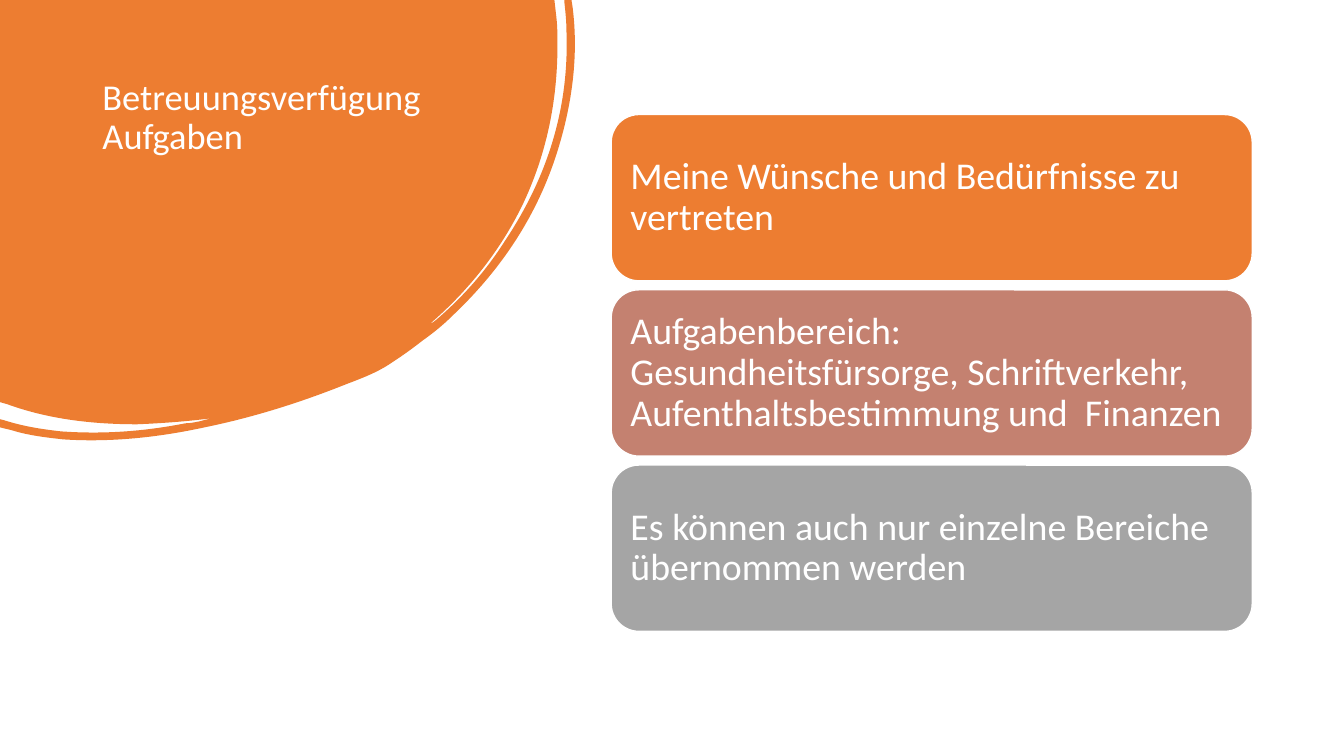
import lxml.etree
import pptx
import pptx.util
import pptx.dml.color
import pptx.enum.shapes
import pptx.enum.text
import pptx.oxml.ns

Pt = pptx.util.Pt
qn = pptx.oxml.ns.qn
COLORS = {"orange": "ED7D31", "rose": "C48170", "gray": "A5A5A5", "white": "FFFFFF"}
FONT = "Calibri"
UNITS = 100  # path units per point
BLOB_WIDTH, BLOB_HEIGHT = 411.1, 314.6

# Each entry is one point (straight line) or three points (Bezier curve), in points.
BLOB = [
    [(396, 0)],
    [(397.4, 12.2)],
    [(398.2, 18.7), (398.2, 25.9), (398.2, 32.4)],
    [(398.2, 72.7), (390.2, 110.9), (373, 146.9)],
    [(357.1, 179.3), (334.8, 207.4), (307.4, 231.1)],
    [(308.9, 231.1), (309.6, 229.7), (311, 229)],
    [(330.5, 212.4), (347, 193.7), (360.7, 172.1)],
    [(391, 126.7), (406.8, 77), (404.6, 21.6)],
    [(404.6, 15.1), (403.9, 8.6), (403.2, 2.2)],
    [(403.2, 0)],
    [(408.2, 0)],
    [(409, 5)],
    [(413.3, 38.9), (409, 73.4), (398.2, 108)],
    [(383.8, 154.1), (357.8, 193), (322.6, 226.1)],
    [(316.1, 232.6), (308.9, 238.3), (301.7, 243.4)],
    [(294.5, 249.1), (287.3, 254.2), (278.6, 259.9)],
    [(270, 265.7), (259.2, 270), (247.7, 274.3)],
    [(215.3, 287.3), (181.4, 298.1), (146.2, 305.3)],
    [(113, 312.5), (79.2, 316.1), (45.4, 313.9)],
    [(32.4, 312.5), (20.2, 311), (8.6, 307.4)],
    [(0, 305.3)],
    [(0, 299.5)],
    [(2.9, 300.2)],
    [(16.6, 304.6), (30.2, 306.7), (43.9, 308.2)],
    [(74.2, 310.3), (103, 308.2), (132.5, 302.4)],
    [(136.1, 302.4), (139, 301.7), (142.6, 301)],
    [(145.4, 300.2), (148.3, 299.5), (151.2, 298.8)],
    [(133.9, 301), (115.9, 302.4), (97.9, 303.1)],
    [(66.2, 303.1), (34.6, 299.5), (5, 288.7)],
    [(0, 287.3)],
]

CARDS = [
    ("Meine Wünsche und Bedürfnisse zu vertreten", "orange"),
    ("Aufgabenbereich: Gesundheitsfürsorge, Schriftverkehr, "
     "Aufenthaltsbestimmung und  Finanzen", "rose"),
    ("Es können auch nur einzelne Bereiche übernommen werden", "gray"),
]
CARD_LEFT, CARD_TOP, CARD_WIDTH, CARD_HEIGHT = 436.6, 81.8, 457.9, 118.8
CARD_STEP = 125.2


def rgb(name):
    return pptx.dml.color.RGBColor.from_string(COLORS[name])


def set_fill(sp, color):
    sp.shadow.inherit = False
    sp.fill.solid()
    sp.fill.fore_color.rgb = rgb(color)


def set_text(sp, text, size, anchor):
    tf = sp.text_frame
    tf.text = text
    tf.word_wrap = True
    tf.auto_size = pptx.enum.text.MSO_AUTO_SIZE.NONE
    tf.vertical_anchor = anchor
    p = tf.paragraphs[0]
    p.alignment = pptx.enum.text.PP_ALIGN.LEFT
    p.line_spacing = 0.9
    font = p.runs[0].font
    font.name = FONT
    font.size = Pt(size)
    font.color.rgb = rgb("white")


def bend_lines(sp, segments):
    """Turn the line of every three-point segment into a Bezier curve."""
    lines = list(sp._element.iter(qn("a:lnTo")))
    for line, segment in zip(lines, segments):
        if len(segment) == 3:
            curve = lxml.etree.Element(qn("a:cubicBezTo"))
            for x, y in segment:
                lxml.etree.SubElement(curve, qn("a:pt"), x=str(round(x * UNITS)),
                                      y=str(round(y * UNITS)))
            line.getparent().replace(line, curve)


def add_blob(s):
    ends = [(x * UNITS, y * UNITS) for x, y in (segment[-1] for segment in BLOB)]
    builder = s.shapes.build_freeform(0, 0, scale=Pt(1) / UNITS)
    builder.add_line_segments(ends, close=True)
    sp = builder.convert_to_shape()
    bend_lines(sp, BLOB)
    # The curves reach beyond their end points, so the frame is widened to hold them.
    sp.width, sp.height = Pt(BLOB_WIDTH), Pt(BLOB_HEIGHT)
    outline = next(sp._element.iter(qn("a:path")))
    outline.set("w", str(round(BLOB_WIDTH * UNITS)))
    outline.set("h", str(round(BLOB_HEIGHT * UNITS)))
    set_fill(sp, "orange")
    sp.line.fill.background()
    return sp


def add_title(s, blob):
    """Fill the title placeholder and keep it in front of the blob."""
    title = s.shapes.title
    title.left, title.top, title.width, title.height = Pt(66), Pt(53), Pt(253.4), Pt(160)
    set_text(title, "Betreuungsverfügung Aufgaben", 26, pptx.enum.text.MSO_ANCHOR.TOP)
    title._element.addprevious(blob._element)


def add_card(s, top, text, color):
    sp = s.shapes.add_shape(pptx.enum.shapes.MSO_SHAPE.ROUNDED_RECTANGLE, Pt(CARD_LEFT),
                            Pt(top), Pt(CARD_WIDTH), Pt(CARD_HEIGHT))
    set_fill(sp, color)
    sp.line.color.rgb = rgb("white")
    sp.line.width = Pt(1)
    tf = sp.text_frame
    tf.margin_left = tf.margin_right = tf.margin_top = tf.margin_bottom = Pt(8)
    set_text(sp, text, 27, pptx.enum.text.MSO_ANCHOR.MIDDLE)


def main():
    prs = pptx.Presentation()
    prs.slide_width, prs.slide_height = Pt(960), Pt(540)
    s = prs.slides.add_slide(prs.slide_layouts[5])
    add_title(s, add_blob(s))
    for i, (text, color) in enumerate(CARDS):
        add_card(s, CARD_TOP + i * CARD_STEP, text, color)
    prs.save("out.pptx")


if __name__ == "__main__":
    main()
